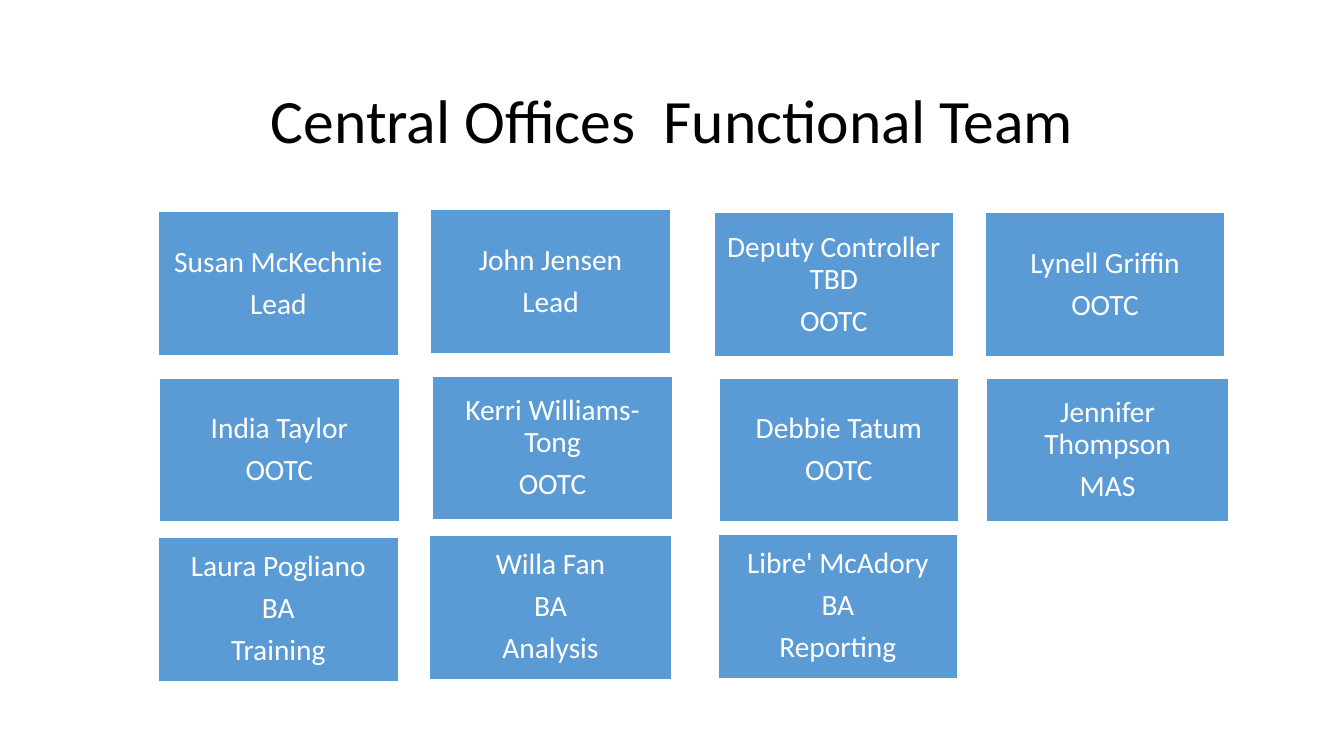
from pptx import Presentation
from pptx.dml.color import RGBColor
from pptx.enum.shapes import MSO_SHAPE as Shape
from pptx.enum.text import MSO_ANCHOR as Anchor, PP_ALIGN as Align
from pptx.util import Inches, Pt

FONT = "Calibri"
BLUE, WHITE, BLACK = "5B9BD5", "FFFFFF", "000000"
WIDTH, HEIGHT = 2.38, 1.43

# left, top, width, lines of text
TEAM = [
    (1.57, 2.1, WIDTH, ["Susan McKechnie", "Lead"]),
    (4.27, 2.08, WIDTH, ["John Jensen", "Lead"]),
    (7.08, 2.11, WIDTH, ["Deputy Controller TBD", "OOTC"]),
    (9.77, 2.11, WIDTH, ["Lynell Griffin", "OOTC"]),
    (1.58, 3.75, WIDTH, ["India Taylor", "OOTC"]),
    (4.29, 3.73, WIDTH, ["Kerri Williams-Tong", "OOTC"]),
    (7.13, 3.75, WIDTH, ["Debbie Tatum", "OOTC"]),
    (9.78, 3.75, 2.41, ["Jennifer Thompson", "MAS"]),
    (1.57, 5.33, WIDTH, ["Laura Pogliano", "BA", "Training"]),
    (4.26, 5.31, 2.4, ["Willa Fan", "BA", "Analysis"]),
    (7.12, 5.3, WIDTH, ["Libre' McAdory", "BA", "Reporting"]),
]


def color(code):
    return RGBColor.from_string(code)


def style(frame, size, code, after=0):
    """Centre the text both ways and format every run."""
    frame.word_wrap = True
    frame.vertical_anchor = Anchor.MIDDLE
    for para in frame.paragraphs:
        para.alignment = Align.CENTER
        para.line_spacing = 0.9
        para.space_after = Pt(after)
        for run in para.runs:
            run.font.name = FONT
            run.font.size = Pt(size)
            run.font.color.rgb = color(code)


def set_title(slide, text):
    title = slide.shapes.title
    title.left, title.top = Inches(0.92), Inches(0.61)
    title.width, title.height = Inches(11.5), Inches(1.24)
    title.text_frame.text = text
    style(title.text_frame, 44, BLACK)


def add_card(slide, left, top, width, lines):
    card = slide.shapes.add_shape(
        Shape.RECTANGLE, Inches(left), Inches(top), Inches(width), Inches(HEIGHT))
    card.shadow.inherit = False
    card.fill.solid()
    card.fill.fore_color.rgb = color(BLUE)
    card.line.color.rgb = color(WHITE)
    card.line.width = Pt(1)
    frame = card.text_frame
    frame.margin_left = frame.margin_right = Inches(0.09)
    frame.margin_top = frame.margin_bottom = Inches(0.09)
    frame.text = "\n".join(lines)
    style(frame, 21, WHITE, after=7.35)


def main():
    deck = Presentation()
    deck.slide_width, deck.slide_height = Inches(13.33), Inches(7.5)
    slide = deck.slides.add_slide(deck.slide_layouts[5])
    set_title(slide, "Central Offices  Functional Team")
    for left, top, width, lines in TEAM:
        add_card(slide, left, top, width, lines)
    deck.save("out.pptx")


if __name__ == "__main__":
    main()
